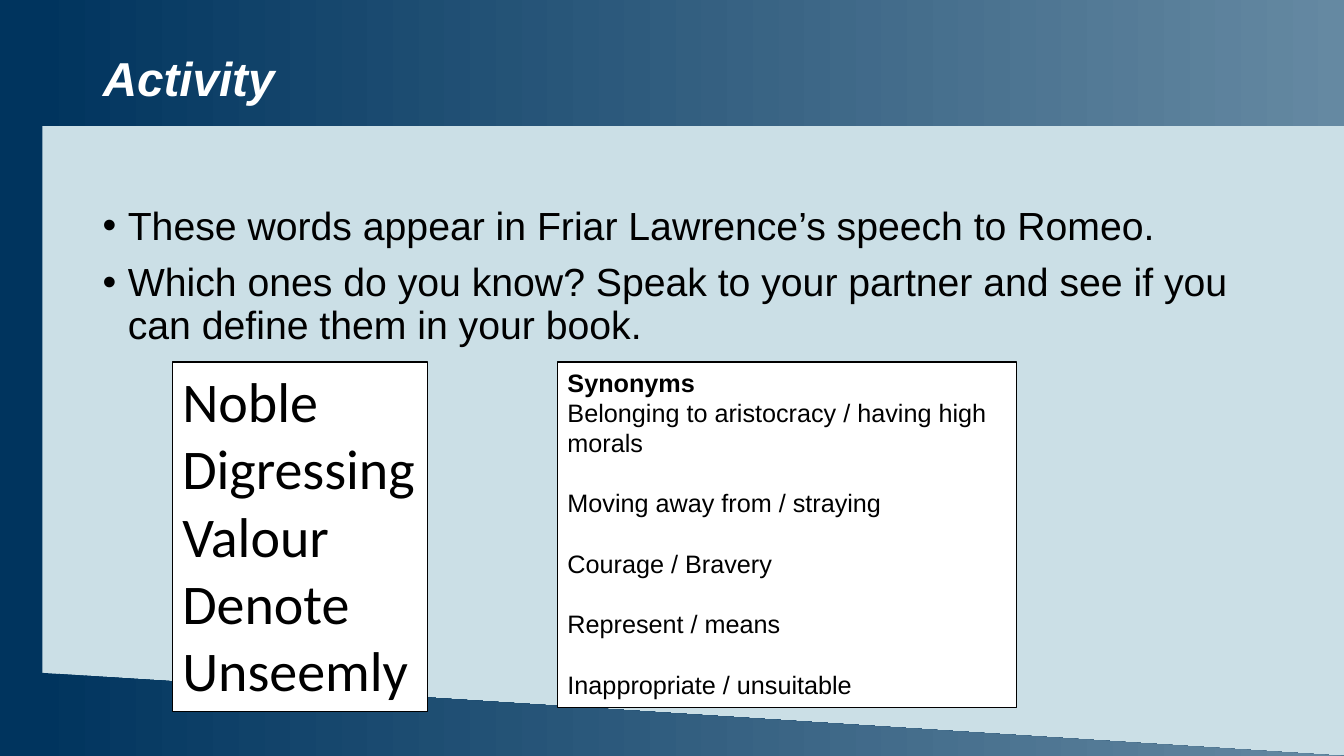
"""Build a vocabulary activity slide with a word list and its synonyms."""
from lxml import etree
from pptx import Presentation
from pptx import util as u
from pptx.dml.color import RGBColor
from pptx.enum import shapes, text
from pptx.oxml.ns import qn

NAVY = RGBColor(0x00, 0x34, 0x5E)
STEEL = RGBColor(0x65, 0x89, 0xA2)
PALE_BLUE = RGBColor(0xCB, 0xDF, 0xE6)
WHITE = RGBColor(0xFF, 0xFF, 0xFF)
BLACK = RGBColor(0x00, 0x00, 0x00)

TITLE_FONT = {"name": "Arial", "size": u.Pt(34), "bold": True, "italic": True}
TASK_FONT = {"name": "Arial", "size": u.Pt(28)}
WORD_FONT = {"name": "Calibri", "size": u.Pt(40)}
SYNONYM_FONT = {"name": "Arial", "size": u.Pt(18)}
SYNONYM_GAP = {"space_after": u.Pt(21.6)}
TASK_SPACING = {"line_spacing": 0.9, "space_before": u.Pt(10)}

TASKS = [
    "These words appear in Friar Lawrence’s speech to Romeo.",
    "Which ones do you know? Speak to your partner and see if you can define them in your book.",
]
WORDS = ["Noble", "Digressing", "Valour", "Denote", "Unseemly"]
SYNONYMS = [
    "Belonging to aristocracy / having high morals",
    "Moving away from / straying",
    "Courage / Bravery",
    "Represent / means",
    "Inappropriate / unsuitable",
]


def apply(target, values):
    """Set each named attribute on the target."""
    for name, value in values.items():
        setattr(target, name, value)


def inches(*lengths):
    """Turn plain numbers into lengths."""
    return [u.Inches(length) for length in lengths]


def write_lines(frame, lines, font, spacing, color=BLACK):
    """Write one left-aligned paragraph per line."""
    frame.text = "\n".join(lines)
    for paragraph in frame.paragraphs:
        apply(paragraph, {"alignment": text.PP_ALIGN.LEFT, **spacing})
        for run in paragraph.runs:
            apply(run.font, font)
            run.font.color.rgb = color


def add_block(slide, place, preset=shapes.MSO_SHAPE.RECTANGLE, color=NAVY):
    """Add a plain shape without line or shadow."""
    block = slide.shapes.add_shape(preset, *inches(*place))
    block.shadow.inherit = False
    block.fill.solid()
    block.fill.fore_color.rgb = color
    block.line.fill.background()
    return block


def fade(block):
    """Fade a shape from navy on the left to steel on the right."""
    block.fill.gradient()
    block.fill.gradient_angle = 0
    for stop, color in zip(block.fill.gradient_stops, (NAVY, STEEL)):
        stop.color.rgb = color


def add_title(slide, wording):
    """Place and format the title above the header band."""
    title = slide.shapes.title
    slide.shapes._spTree.append(title._element)
    apply(title, dict(zip(("left", "top", "width", "height"), inches(0.92, 0.5, 11.5, 1.45))))
    apply(title.text_frame, {"vertical_anchor": text.MSO_ANCHOR.TOP, "word_wrap": True})
    write_lines(title.text_frame, [wording], TITLE_FONT, {"line_spacing": 0.9}, WHITE)


def add_tasks(slide):
    """Add the bulleted instructions."""
    frame = slide.shapes.add_textbox(*inches(0.92, 2, 11.5, 1.55)).text_frame
    frame.word_wrap = True
    write_lines(frame, TASKS, TASK_FONT, TASK_SPACING)
    for paragraph in frame.paragraphs:
        properties = paragraph._p.get_or_add_pPr()
        properties.set("marL", str(u.Inches(0.25)))
        properties.set("indent", str(u.Inches(-0.25)))
        etree.SubElement(properties, qn("a:buFont")).set("typeface", "Arial")
        etree.SubElement(properties, qn("a:buChar")).set("char", "•")


def add_card(slide, place, lines, font, spacing, wrap):
    """Add a white outlined card of text and return its frame."""
    card = add_block(slide, place, color=WHITE)
    card.line.color.rgb = BLACK
    card.line.width = u.Pt(1)
    frame = card.text_frame
    apply(frame, {
        "word_wrap": wrap,
        "auto_size": text.MSO_AUTO_SIZE.SHAPE_TO_FIT_TEXT,
        "vertical_anchor": text.MSO_ANCHOR.TOP,
    })
    write_lines(frame, lines, font, spacing)
    return frame


def main():
    """Build and save the slide."""
    deck = Presentation()
    apply(deck, {"slide_width": u.Inches(13.33), "slide_height": u.Inches(7.5)})
    slide = deck.slides.add_slide(deck.slide_layouts[5])
    slide.background.fill.solid()
    slide.background.fill.fore_color.rgb = PALE_BLUE

    fade(add_block(slide, (0.33, 0, 13, 1.25)))
    add_title(slide, "Activity")
    add_tasks(slide)
    add_block(slide, (0, 0, 0.42, 7.5))
    fade(add_block(slide, (0.33, 6.67, 13, 0.83), shapes.MSO_SHAPE.RIGHT_TRIANGLE))

    add_card(slide, (1.71, 3.59, 2.53, 3.47), WORDS, WORD_FONT, {}, False)
    synonyms = add_card(slide, (5.53, 3.59, 4.55, 3.43), ["Synonyms", *SYNONYMS],
                        SYNONYM_FONT, SYNONYM_GAP, True)
    heading, *_, last = synonyms.paragraphs
    heading.runs[0].font.bold = True
    heading.space_after = last.space_after = u.Pt(0)

    deck.save("out.pptx")


if __name__ == "__main__":
    main()
